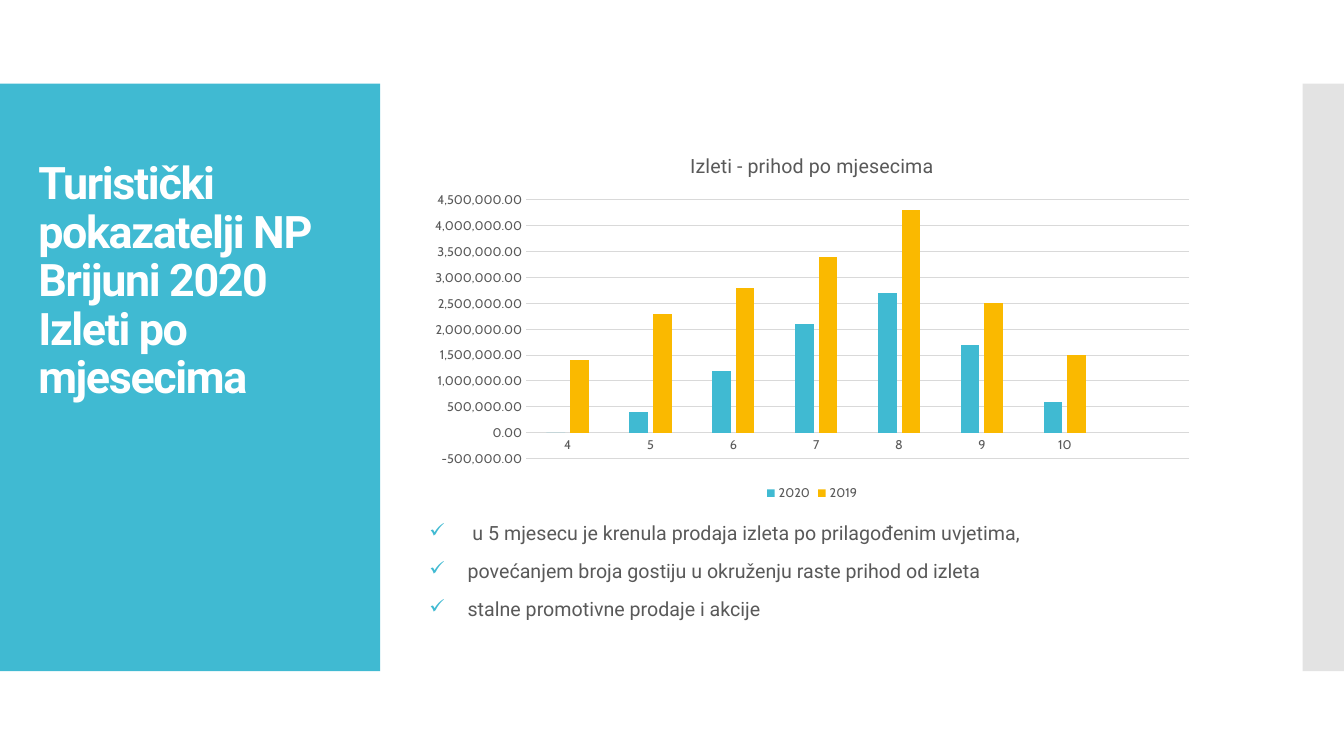
from lxml.etree import SubElement
from pptx import Presentation
from pptx.chart.data import CategoryChartData
from pptx.dml.color import RGBColor
from pptx.enum.chart import XL_CHART_TYPE, XL_LEGEND_POSITION, XL_TICK_LABEL_POSITION, XL_TICK_MARK
from pptx.enum.shapes import MSO_SHAPE
from pptx.enum.text import MSO_ANCHOR, PP_ALIGN
from pptx.oxml.ns import qn
from pptx.util import Inches, Pt


def paint(color_format, value):
    color_format.rgb = RGBColor.from_string(value)


class SlideBuilder:
    """Holds the style and the current slide, and adds each kind of element."""

    teal, amber, gray, rule = "40BAD2", "FAB900", "595959", "D9D9D9"
    text_font, chart_font = "Roboto", "Cabin"

    def __init__(self, page):
        self.page = page

    def style_font(self, font, size, color, name, bold=False):
        font.size, font.name, font.bold = Pt(size), name, bold
        paint(font.color, color)

    def panel(self, left, width, color, alpha=None):
        box = self.page.shapes.add_shape(
            MSO_SHAPE.RECTANGLE, Inches(left), Inches(0.83), Inches(width), Inches(5.83))
        box.shadow.inherit = False
        box.fill.solid()
        paint(box.fill.fore_color, color)
        box.line.fill.background()
        if alpha:
            color_node = box.fill._xPr.find(qn("a:solidFill"))[0]
            SubElement(color_node, qn("a:alpha"), val=str(alpha * 1000))

    def title(self, lines):
        box = self.page.shapes.title
        self.page.shapes._spTree.append(box._element)
        box.left, box.top, box.width, box.height = map(Inches, (0.28, 1.23, 3.22, 2.82))
        frame = box.text_frame
        frame.text = "\n".join(lines)
        frame.word_wrap = True
        frame.vertical_anchor = MSO_ANCHOR.BOTTOM
        for para in frame.paragraphs:
            para.alignment = PP_ALIGN.LEFT
            para.line_spacing = 0.9
            para.space_before = Pt(0)
            self.style_font(para.font, 32, "FFFFFF", self.text_font, True)
            for span in para.runs:
                span._r.get_or_add_rPr().set("spc", "-100")

    def bullets(self, lines):
        box = self.page.shapes.add_textbox(Inches(4.16), Inches(5.15), Inches(8), Inches(1.36))
        frame = box.text_frame
        frame.word_wrap = True
        frame.text = "\n".join(lines)
        for index, para in enumerate(frame.paragraphs):
            para.line_spacing = 0.9
            para.space_before = Pt(12 if index else 0)
            properties = para._p.get_or_add_pPr()
            properties.set("marL", str(Inches(0.38)))
            properties.set("indent", str(-Inches(0.38)))
            bullet_color = SubElement(properties, qn("a:buClr"))
            SubElement(bullet_color, qn("a:srgbClr"), val=self.teal)
            SubElement(properties, qn("a:buChar"), char="✓")
            self.style_font(para.font, 14, self.gray, self.text_font)

    def style_axis(self, axis):
        axis.major_tick_mark = axis.minor_tick_mark = XL_TICK_MARK.NONE
        self.style_font(axis.tick_labels.font, 9, self.gray, self.chart_font)

    def style_line(self, line):
        line.width = Pt(0.75)
        paint(line.color, self.rule)

    def column_chart(self, title, categories, series):
        data = CategoryChartData(number_format="#,##0.00")
        data.categories = categories
        for name, values in series.items():
            data.add_series(name, values)
        chart = self.page.shapes.add_chart(
            XL_CHART_TYPE.COLUMN_CLUSTERED, Inches(4.16), Inches(1.35),
            Inches(7.79), Inches(3.66), data).chart
        self.style_font(chart.font, 10, "000000", self.chart_font)

        chart.has_title = True
        chart.chart_title.include_in_layout = False
        chart.chart_title.text_frame.text = title
        para = chart.chart_title.text_frame.paragraphs[0]
        self.style_font(para.font, 14, self.gray, self.text_font)

        chart.has_legend = True
        chart.legend.position = XL_LEGEND_POSITION.BOTTOM
        chart.legend.include_in_layout = False
        self.style_font(chart.legend.font, 9, self.gray, self.chart_font)

        months, income = chart.category_axis, chart.value_axis
        self.style_axis(months)
        self.style_axis(income)
        self.style_line(months.format.line)
        months.tick_label_position = XL_TICK_LABEL_POSITION.NEXT_TO_AXIS
        income.format.line.fill.background()
        income.has_major_gridlines = True
        self.style_line(income.major_gridlines.format.line)
        income.minimum_scale, income.maximum_scale = -500000, 4500000
        income.major_unit = 500000
        income.tick_labels.number_format = "#,##0.00"
        income.tick_labels.number_format_is_linked = False

        plot = chart.plots[0]
        plot.gap_width, plot.overlap, plot.vary_by_categories = 219, -27, False
        for columns, color in zip(plot.series, (self.teal, self.amber)):
            columns.invert_if_negative = False
            columns.format.fill.solid()
            paint(columns.format.fill.fore_color, color)


def main():
    deck = Presentation()
    deck.slide_width, deck.slide_height = Inches(13.33), Inches(7.5)
    builder = SlideBuilder(deck.slides.add_slide(deck.slide_layouts[5]))
    builder.panel(0, 3.77, builder.teal)
    builder.panel(12.92, 0.41, "C8C8C8", alpha=50)
    builder.bullets([
        " u 5 mjesecu je krenula prodaja izleta po prilagođenim uvjetima,",
        "povećanjem broja gostiju u okruženju raste prihod od izleta",
        "stalne promotivne prodaje i akcije",
    ])
    builder.title(["Turistički pokazatelji NP Brijuni 2020", "Izleti po mjesecima"])
    builder.column_chart(
        "Izleti - prihod po mjesecima",
        ["4", "5", "6", "7", "8", "9", "10", ""],
        {
            "2020": [0, 400000, 1200000, 2100000, 2700000, 1700000, 600000, None],
            "2019": [1400000, 2300000, 2800000, 3400000, 4300000, 2500000, 1500000, None],
        })
    deck.save("out.pptx")


if __name__ == "__main__":
    main()
